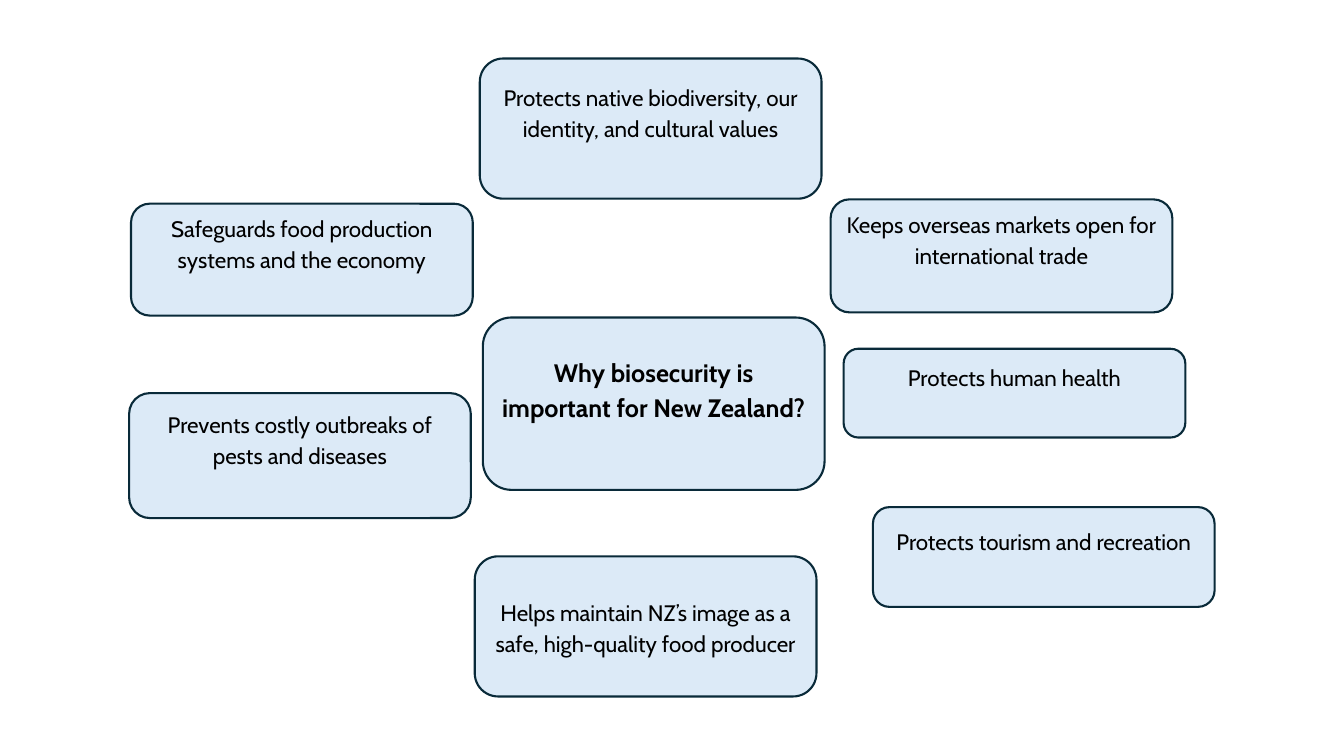
from dataclasses import dataclass

from pptx import Presentation
from pptx.dml.color import RGBColor
from pptx.enum.shapes import MSO_SHAPE
from pptx.enum.text import MSO_ANCHOR, PP_ALIGN
from pptx.util import Pt


@dataclass(frozen=True)
class Theme:
    """Colours, type and line sizes of the slide."""
    fill: RGBColor = RGBColor(0xDC, 0xEA, 0xF7)
    edge: RGBColor = RGBColor(0x09, 0x2A, 0x39)
    ink: RGBColor = RGBColor(0, 0, 0)
    font: str = "Cabin"
    head: float = 18
    body: float = 16
    rule: float = 1.5


THEME = Theme()
WIDE = 244.1
LIFT = 28.4
CORE = ("Why biosecurity is important for New Zealand?", 344.9, 226.8, 123.1)
REASONS = [
    ("Keeps overseas markets open for international trade", 593.3, 142.4, 80.7, LIFT),
    ("Safeguards food production systems and the economy", 93.6, 145.5, 79.9, LIFT),
    ("Protects native biodiversity, our identity, and cultural values",
     342.7, 41.8, 100.1, LIFT),
    ("Protects human health", 602.6, 249.1, 63.4, LIFT),
    ("Prevents costly outbreaks of pests and diseases", 92.2, 280.8, 89.3, LIFT),
    ("Protects tourism and recreation", 623.5, 362.2, 71.3, LIFT),
    ("Helps maintain NZ’s image as a safe, high-quality food producer",
     339.1, 397.4, 100.1, 3.6),
]


def apply(item, style):
    """Set each named value on the item."""
    for name, value in style.items():
        setattr(item, name, value)


def add_card(slide, box, text, size, bold, foot):
    """Draw a rounded card whose text sits above a foot margin."""
    card = slide.shapes.add_shape(MSO_SHAPE.ROUNDED_RECTANGLE, *map(Pt, box))
    card.shadow.inherit = False
    card.fill.solid()
    card.fill.fore_color.rgb = THEME.fill
    card.line.color.rgb = THEME.edge
    card.line.width = Pt(THEME.rule)
    frame = card.text_frame
    apply(frame, {"word_wrap": True, "vertical_anchor": MSO_ANCHOR.MIDDLE,
                  "margin_bottom": Pt(foot)})
    para = frame.paragraphs[0]
    apply(para, {"text": text, "alignment": PP_ALIGN.CENTER, "line_spacing": 1.15})
    font = para.runs[0].font
    apply(font, {"name": THEME.font, "size": Pt(size), "bold": bold})
    font.color.rgb = THEME.ink


def add_core(slide, box, text):
    """Draw the central question."""
    add_card(slide, box, text, THEME.head, True, 26.4)


def add_reason(slide, box, text, foot):
    """Draw one reason around the question."""
    add_card(slide, box, text, THEME.body, False, foot)


def main():
    """Build and save the slide."""
    deck = Presentation()
    apply(deck, {"slide_width": Pt(960), "slide_height": Pt(540)})
    slide = deck.slides.add_slide(deck.slide_layouts[6])
    text, left, top, high = CORE
    add_core(slide, (left, top, WIDE, high), text)
    for text, left, top, high, foot in REASONS:
        add_reason(slide, (left, top, WIDE, high), text, foot)
    deck.save("out.pptx")


if __name__ == "__main__":
    main()
